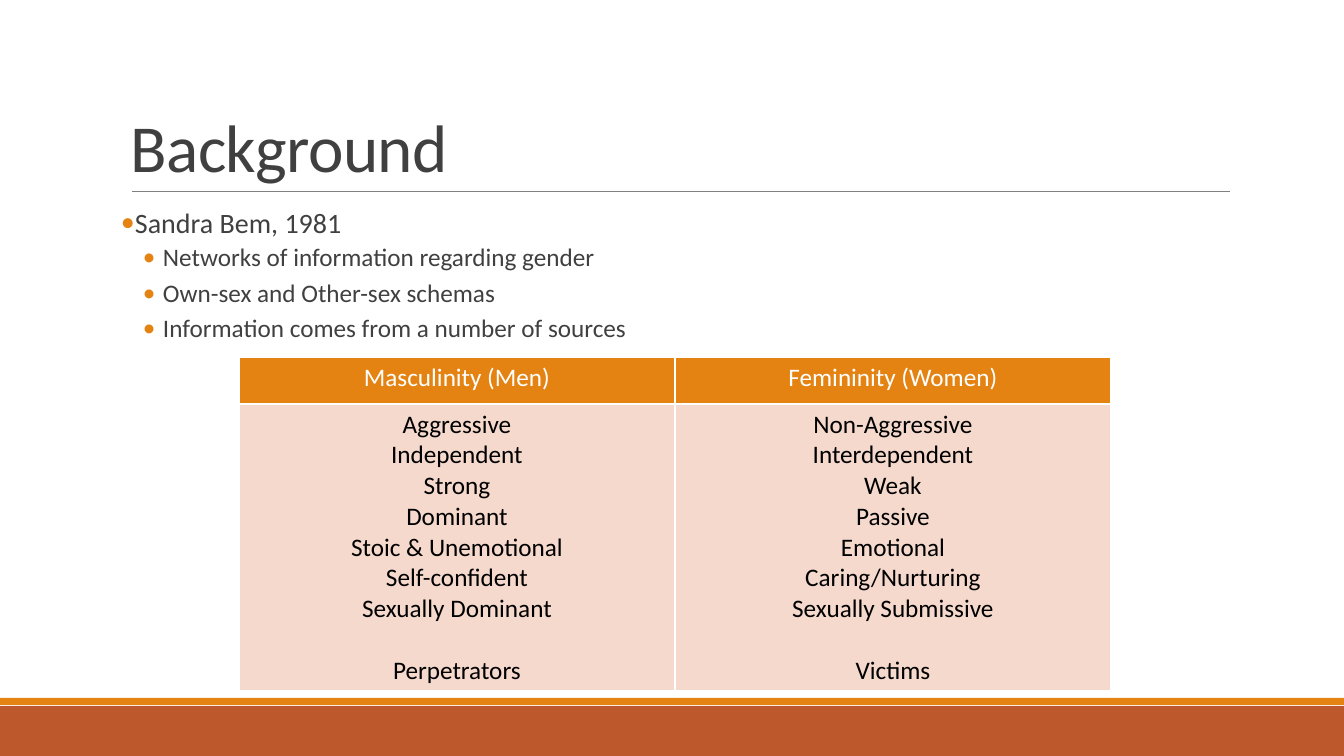
from dataclasses import dataclass

from lxml.etree import SubElement
from pptx import Presentation
from pptx.dml.color import RGBColor
from pptx.enum.shapes import MSO_CONNECTOR, MSO_SHAPE
from pptx.enum.text import MSO_ANCHOR, PP_ALIGN
from pptx.oxml import parse_xml
from pptx.oxml.ns import nsdecls, qn
from pptx.util import Pt


@dataclass(frozen=True)
class Theme:
    font: str = "Calibri"
    text: str = "404040"
    accent: str = "E48312"
    footer: str = "BD582C"
    rule: str = "808080"
    white: str = "FFFFFF"
    black: str = "000000"
    tint: str = "F5D9CC"
    title_size: int = 48
    lead_size: int = 20
    body_size: int = 18


theme = Theme()


def px(*lengths):
    return [round(length * 914400 / 100.8) for length in lengths]


def style(para, size, color):
    para.font.name = theme.font
    para.font.size = Pt(size)
    para.font.color.rgb = RGBColor.from_string(color)


deck = Presentation()
deck.slide_width, deck.slide_height = px(1344, 756)
page = deck.slides.add_slide(deck.slide_layouts[6])

for top, height, color in [(706, 50, theme.footer), (698, 7, theme.accent)]:
    bar = page.shapes.add_shape(MSO_SHAPE.RECTANGLE, *px(0, top, 1344, height))
    bar.shadow.inherit = False
    bar.fill.solid()
    bar.fill.fore_color.rgb = RGBColor.from_string(color)
    bar.line.fill.background()

rule = page.shapes.add_connector(MSO_CONNECTOR.STRAIGHT, *px(132, 191, 1230, 191))
rule.line.color.rgb = RGBColor.from_string(theme.rule)
rule.line.width = Pt(0.5)
SubElement(rule._element.spPr, qn("a:effectLst"))

title = page.shapes.add_textbox(*px(121, 31, 1109, 160)).text_frame
title.word_wrap = True
title.vertical_anchor = MSO_ANCHOR.BOTTOM
para = title.paragraphs[0]
para.line_spacing = 0.85
span = para.add_run()
span.text = "Background"
span._r.get_or_add_rPr().set("spc", "-50")
style(para, theme.title_size, theme.text)

body = page.shapes.add_textbox(*px(121, 204, 1109, 444)).text_frame
body.word_wrap = True
body.margin_left = body.margin_right = 0
points = [
    (0, "Sandra Bem, 1981"),
    (1, "Networks of information regarding gender"),
    (1, "Own-sex and Other-sex schemas"),
    (1, "Information comes from a number of sources"),
]
levels = [
    (theme.lead_size, 12, 2, 10, -10),
    (theme.body_size, 2, 4, 42, -20),
]
for index, (level, text) in enumerate(points):
    size, before, after, margin, indent = levels[level]
    para = body.add_paragraph() if index else body.paragraphs[0]
    para.text = text
    para.level = level
    para.line_spacing = 0.9
    para.space_before = Pt(before)
    para.space_after = Pt(after)
    style(para, size, theme.text)
    properties = para._p.get_or_add_pPr()
    for name, length in zip(("marL", "indent"), px(margin, indent)):
        properties.set(name, str(length))
    bullet_color = SubElement(properties, qn("a:buClr"))
    SubElement(bullet_color, qn("a:srgbClr"), val=theme.accent)
    SubElement(properties, qn("a:buFont"), typeface=theme.font)
    SubElement(properties, qn("a:buChar"), char="•")
    properties.extend(properties.findall(qn("a:defRPr")))

traits = [
    ("Masculinity (Men)", "Femininity (Women)"),
    ("Aggressive", "Non-Aggressive"),
    ("Independent", "Interdependent"),
    ("Strong", "Weak"),
    ("Dominant", "Passive"),
    ("Stoic & Unemotional", "Emotional"),
    ("Self-confident", "Caring/Nurturing"),
    ("Sexually Dominant", "Sexually Submissive"),
    ("Perpetrators", "Victims"),
]
table = page.shapes.add_table(2, 2, *px(239, 357, 872, 334)).table
table.first_row = table.horz_banding = False
for row, height in zip(table.rows, px(47, 287)):
    row.height = height
for column, words in enumerate(zip(*traits)):
    sections = [
        (words[:1], theme.accent, theme.white),
        (words[1:], theme.tint, theme.black),
    ]
    for row, (lines, fill, color) in enumerate(sections):
        cell = table.cell(row, column)
        cell.text = "\n".join(lines)
        for para in cell.text_frame.paragraphs:
            para.alignment = PP_ALIGN.CENTER
            style(para, theme.body_size, color)
        if row:
            para.space_before = Pt(22)
        for side in ("lnL", "lnR", "lnT", "lnB"):
            cell._tc.get_or_add_tcPr().append(parse_xml(
                f'<a:{side} {nsdecls("a")} w="12700"><a:solidFill>'
                f'<a:srgbClr val="{theme.white}"/></a:solidFill></a:{side}>'
            ))
        cell.fill.solid()
        cell.fill.fore_color.rgb = RGBColor.from_string(fill)

deck.save("out.pptx")
